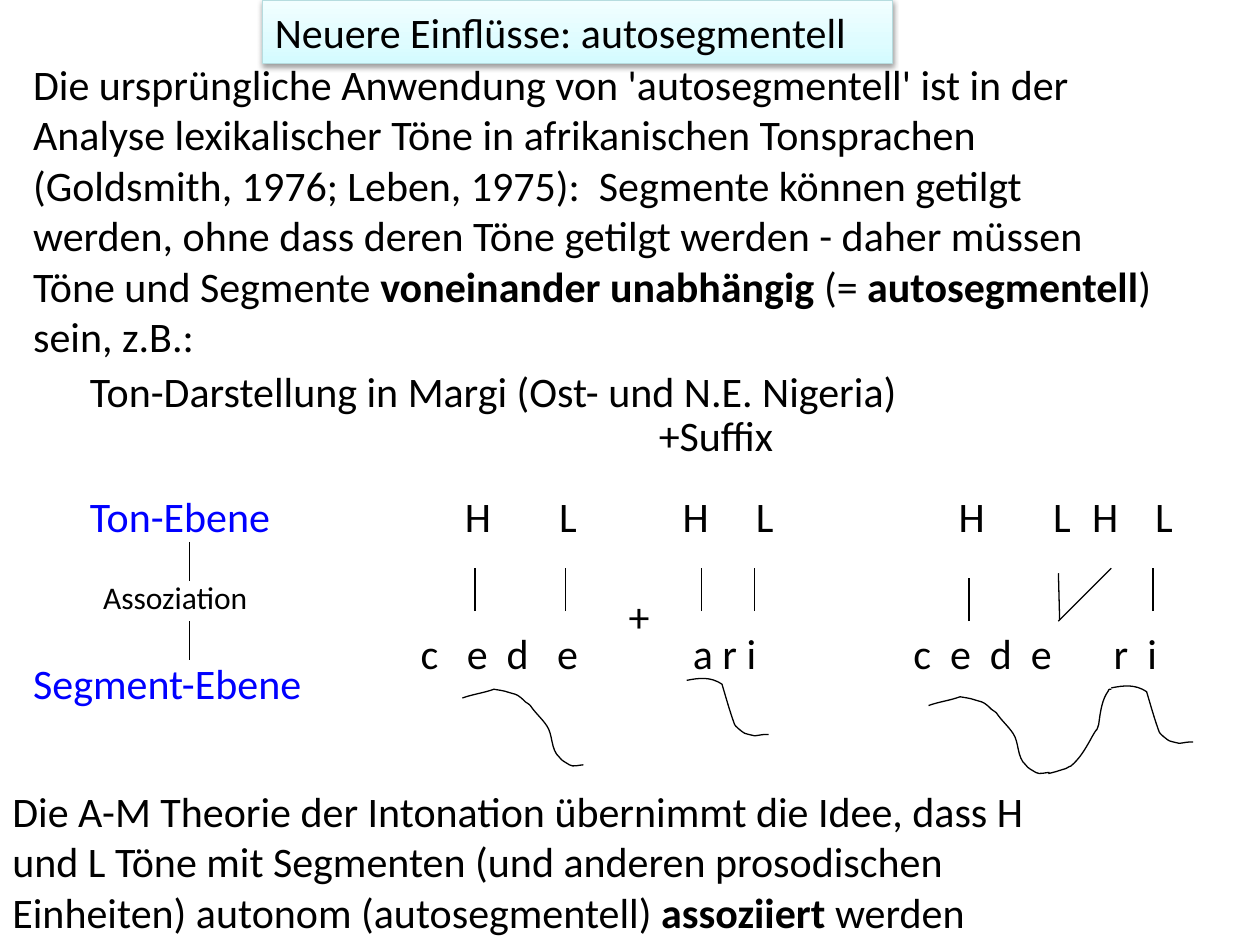
from pptx import Presentation
from pptx.dml.color import RGBColor
from pptx.enum.shapes import MSO_CONNECTOR, MSO_SHAPE
from pptx.enum.text import MSO_ANCHOR, MSO_AUTO_SIZE, PP_ALIGN
from pptx.oxml import parse_xml
from pptx.oxml.ns import nsdecls
from pptx.util import Inches, Pt

STRAIGHT = MSO_CONNECTOR.STRAIGHT
RECTANGLE = MSO_SHAPE.RECTANGLE
FIT = MSO_AUTO_SIZE.SHAPE_TO_FIT_TEXT
LEFT = PP_ALIGN.LEFT
TOP = MSO_ANCHOR.TOP

THEME = {
    "font": "Calibri",
    "body": Pt(24),
    "small": Pt(18),
    "line": Pt(0.75),
    "ink": RGBColor(0x00, 0x00, 0x00),
    "tier": RGBColor(0x00, 0x00, 0xFF),
    "title_edge": RGBColor(0xB6, 0xDC, 0xDF),
    "title_stops": [(0, "D3FBFF"), (35, "DFFCFF"), (100, "F2FEFF")],
}

deck = Presentation()
deck.slide_width, deck.slide_height = Inches(10), Inches(7.5)
page = deck.slides.add_slide(deck.slide_layouts[6])

# Grid of 100 columns by 75 rows
CELL = deck.slide_width // 100
LINE_HEIGHT = 5.05
TONE_ROW, SEGMENT_ROW = 38.45, 49.3
LINK_TOP, LINK_END = 45.1, 48.5


def write(box, spans, size="body", color="ink", wrap=True):
    """Fill a box with one paragraph; each span is (text, bold)."""
    frame = box.text_frame
    for name, value in {"word_wrap": wrap, "auto_size": FIT, "vertical_anchor": TOP}.items():
        setattr(frame, name, value)
    para = frame.paragraphs[0]
    para.alignment = LEFT
    for text, bold in spans:
        span = para.add_run()
        span.text = text
        span.font.color.rgb = THEME[color]
        for name, value in {"name": THEME["font"], "size": THEME[size], "bold": bold}.items():
            setattr(span.font, name, value)


def place(column, row, width, height):
    return [round(value * CELL) for value in (column, row, width, height)]


# Title bar with gradient and soft shadow
title = page.shapes.add_shape(RECTANGLE, *place(20.83, 0, 50, LINE_HEIGHT))
title.line.color.rgb = THEME["title_edge"]
title.line.width = THEME["line"]
stops = "".join(
    f'<a:gs pos="{share * 1000}"><a:srgbClr val="{color}"/></a:gs>'
    for share, color in THEME["title_stops"]
)
properties = title.element.spPr
properties.insert(2, parse_xml(
    f'<a:gradFill {nsdecls("a")} rotWithShape="1"><a:gsLst>{stops}</a:gsLst>'
    '<a:lin ang="16200000" scaled="0"/></a:gradFill>'
))
properties.append(parse_xml(
    f'<a:effectLst {nsdecls("a")}><a:outerShdw blurRad="39400" dist="20300" dir="5400000"'
    ' rotWithShape="0"><a:srgbClr val="000000"><a:alpha val="38000"/></a:srgbClr>'
    '</a:outerShdw></a:effectLst>'
))
write(title, [("Neuere Einflüsse: autosegmentell", False)])

# Running text
paragraphs = [
    ((0, 61.85, 85, 13.1), [
        ("Die A-M Theorie der Intonation übernimmt die Idee, dass H und L Töne mit Segmenten "
         "(und anderen prosodischen Einheiten) autonom (autosegmentell) ", False),
        ("assoziiert", True),
        (" werden", False),
    ]),
    ((1.65, 4.15, 91.7, 25.2), [
        ("Die ursprüngliche Anwendung von 'autosegmentell' ist in der Analyse lexikalischer "
         "Töne in afrikanischen Tonsprachen (Goldsmith, 1976; Leben, 1975):  Segmente können "
         "getilgt werden, ohne dass deren Töne getilgt werden - daher müssen Töne und "
         "Segmente ", False),
        ("voneinander unabhängig", True),
        (" (= ", False),
        ("autosegmentell", True),
        (") sein, z.B.:", False),
    ]),
    ((6.15, 28.5, 72.9, LINE_HEIGHT),
     [("Ton-Darstellung in Margi (Ost- und N.E. Nigeria)", False)]),
]
for area, spans in paragraphs:
    write(page.shapes.add_textbox(*place(*area)), spans)

# Tier names and the association between them
write(page.shapes.add_textbox(*place(7.2, 45.4, 18.9, 4)), [("Assoziation", False)], "small")
labels = [
    ("Ton-Ebene", 6.15, TONE_ROW, 16.8, "tier"),
    ("Segment-Ebene", 1.65, 51.7, 23.6, "tier"),
    ("+Suffix", 51.3, 32, 11.2, "ink"),
    ("+", 48.9, 46.4, 3.7, "ink"),
]

# Tones and segments of stem, suffix and the combined word
labels += [("H", column, TONE_ROW, 4.1, "ink") for column in (35.9, 53.2, 75.1, 85.7)]
labels += [("L", column, TONE_ROW, 3.4, "ink") for column in (43.4, 59, 82.6, 90.7)]
labels += [
    (text, column, SEGMENT_ROW, width, "ink")
    for text, column, width in [
        ("c   e  d   e", 32.4, 14.7),
        ("a r i", 54, 7.1),
        ("c  e  d  e", 71.5, 13.1),
        ("r  i", 87.4, 5.5),
    ]
]
for text, column, row, width, color in labels:
    box = page.shapes.add_textbox(*place(column, row, width, LINE_HEIGHT))
    write(box, [(text, False)], color=color, wrap=False)

# Association lines
links = [(column, LINK_END, column, LINK_TOP) for column in (37.7, 44.9, 55.7, 59.9, 91.5)]
links += [(15.05, row, 15.05, row + 3.1) for row in (43, 49.3)]
links += [(76.9, 49.3, 76.9, 45.9), (84, 49.3, 88.2, LINK_TOP)]
for ends in links:
    link = page.shapes.add_connector(STRAIGHT, *place(*ends))
    link.line.color.rgb = THEME["ink"]
    link.line.width = THEME["line"]
    link.element.spPr.append(parse_xml(f'<a:effectLst {nsdecls("a")}/>'))

# Pitch contours: Bézier points relative to the start, three per curve
STEM_FALL = [
    (0.8, -0.3), (1.7, -0.4), (2.5, -0.7), (3.7, -0.5), (3.1, -0.6), (4.2, -0.3),
    (4.5, -0.2), (4.8, 0.1), (5, 0.3), (5.2, 0.4), (5.4, 0.6), (5.4, 0.6),
    (5.8, 1.2), (6.3, 1.6), (6.7, 2.2), (7.2, 2.9), (7, 4.1), (7.7, 4.7),
    (7.9, 5), (8.2, 5.1), (8.5, 5.3), (8.8, 5.5), (9.3, 5.3), (9.6, 5.3),
]
SUFFIX_FALL = [
    (1, -0.2), (1.9, -0.3), (2.8, 0.3), (3.1, 1.3), (3.4, 2.4), (3.8, 3.5),
    (3.8, 3.6), (4.4, 4.1), (4.6, 4.2), (4.9, 4.3), (5.4, 4.4), (5.4, 4.4),
    (6.2, 4.3), (5.8, 4.3), (6.5, 4.3),
]
RISE = [
    (0.8, -0.2), (0.4, -0.1), (1.4, -0.4), (1.5, -0.5), (1.8, -0.6), (1.8, -0.6),
    (2.5, -1.2), (2.9, -1.9), (3.3, -2.6), (4.1, -4.1), (3.7, -3), (4, -3.9),
    (4.1, -4.6), (4.2, -5.6), (4.6, -6.3), (4.9, -6.7), (4.7, -6.7), (5, -6.7),
]
SLANT = [(-0.1, -3.7)]  # a single point stays a straight stroke
contours = [
    (36.7, 55.4, STEM_FALL), (54.5, 54, SUFFIX_FALL),
    (73.7, 56, STEM_FALL), (83.2, 61.4, RISE), (88.2, 54.6, SUFFIX_FALL),
    (84.1, 49.2, SLANT),
]
for column, row, points in contours:
    builder = page.shapes.build_freeform(column * CELL, row * CELL)
    builder.add_line_segments(
        [((column + x) * CELL, (row + y) * CELL) for x, y in points], close=False)
    contour = builder.convert_to_shape()
    contour.shadow.inherit = False
    contour.fill.background()
    contour.line.color.rgb = THEME["ink"]
    contour.line.width = THEME["line"]

    # Merge each three strokes into one Bézier curve
    strokes = contour.element.xpath(".//a:lnTo")
    for first in range(0, len(strokes) - 2, 3):
        curve = parse_xml(f'<a:cubicBezTo {nsdecls("a")}/>')
        strokes[first].addprevious(curve)
        for stroke in strokes[first:first + 3]:
            curve.append(stroke[0])
            stroke.getparent().remove(stroke)

deck.save("out.pptx")
